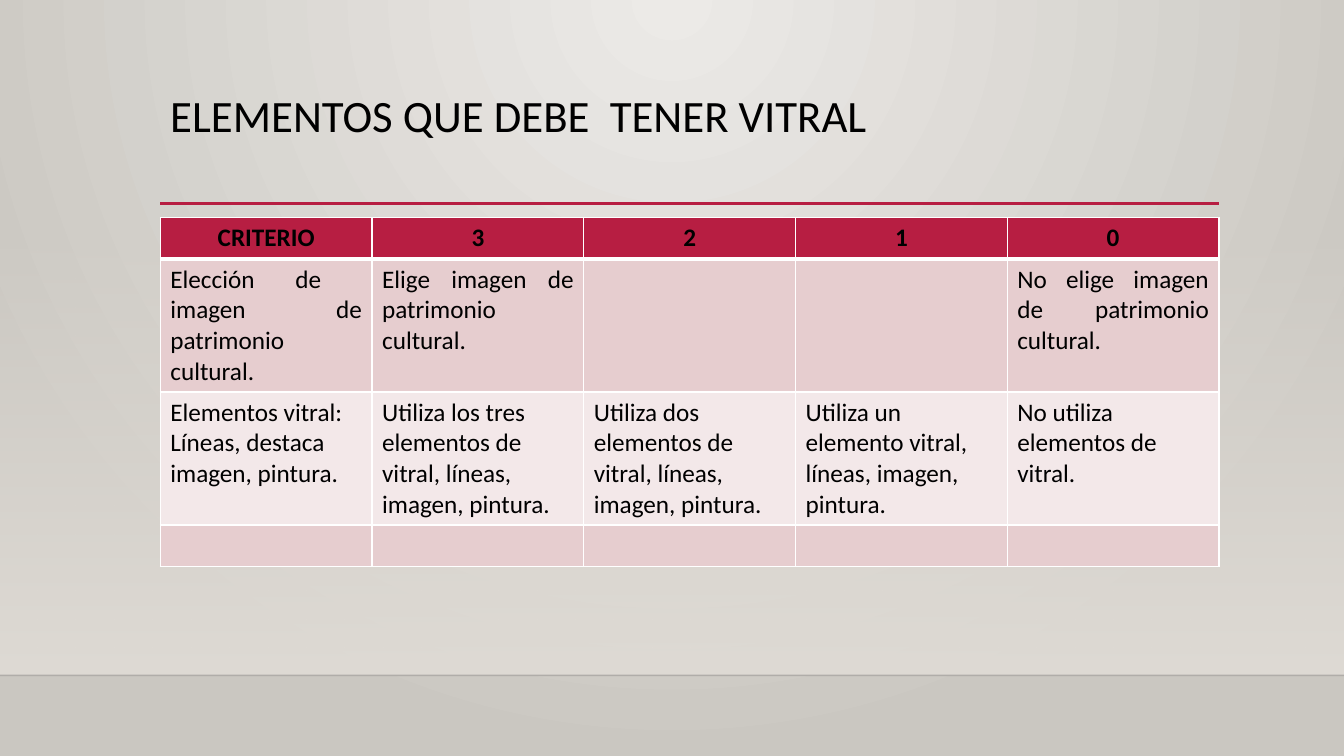
from pptx import Presentation
from pptx.dml.color import RGBColor
from pptx.enum.shapes import MSO_CONNECTOR, MSO_SHAPE
from pptx.enum.text import MSO_ANCHOR, PP_ALIGN
from pptx.oxml import parse_xml
from pptx.oxml.ns import nsdecls
from pptx.util import Inches, Pt
from lxml.etree import SubElement

WIDTH, HEIGHT = 13.33, 7.5
FLOOR_TOP = 6.7
FONT = "Calibri"
ACCENT, BLACK, WHITE = "B71E42", "000000", "FFFFFF"
BANDS = ["E6CDCF", "F3E8E9"]
ROW_HEIGHTS = [0.41, 1.32, 1.32, 0.41]
ROWS = [
    ["CRITERIO", "3", "2", "1", "0"],
    ["Elección de  imagen de patrimonio cultural.",
     "Elige imagen de patrimonio cultural.", "", "",
     "No elige imagen de patrimonio cultural."],
    ["Elementos vitral:\nLíneas, destaca imagen, pintura.",
     "Utiliza los tres elementos de vitral, líneas, imagen, pintura.",
     "Utiliza dos elementos de vitral, líneas, imagen, pintura.",
     "Utiliza un elemento vitral, líneas, imagen, pintura.",
     "No utiliza elementos de vitral."],
    [""] * 5,
]
ALIGNMENTS = [PP_ALIGN.CENTER, PP_ALIGN.JUSTIFY, PP_ALIGN.LEFT, PP_ALIGN.LEFT]


def color(value):
    return RGBColor.from_string(value)


def set_alpha(element, percent):
    """Make the first colour below an element partly transparent."""
    rgb = element.xpath(".//a:srgbClr")[0]
    rgb.append(parse_xml(f'<a:alpha {nsdecls("a")} val="{percent * 1000}"/>'))


def set_gradient(fill, start, end):
    fill.gradient()
    for stop, value in zip(fill.gradient_stops, (start, end)):
        stop.color.rgb = color(value)


def add_line(page, left, top, width, line_color, weight):
    line = page.shapes.add_connector(
        MSO_CONNECTOR.STRAIGHT, Inches(left), Inches(top),
        Inches(left + width), Inches(top))
    line.line.color.rgb = color(line_color)
    line.line.width = Pt(weight)
    properties = line._element.spPr
    SubElement(properties, properties.xpath("a:ln")[0].tag[:-2] + "effectLst")
    return line


def add_backdrop(page):
    """Radial background, wall shading and the line where the floor begins."""
    set_gradient(page.background.fill, "ECEAE7", "CAC7C1")
    gradient = page._element.xpath(".//p:bgPr/a:gradFill")[0]
    gradient.replace(gradient.xpath("a:lin")[0], parse_xml(
        f'<a:path {nsdecls("a")} path="circle">'
        '<a:fillToRect l="43000" t="0" r="43000" b="100000"/></a:path>'))

    wall_top = 2.21
    wall = page.shapes.add_shape(
        MSO_SHAPE.RECTANGLE, 0, Inches(wall_top),
        Inches(WIDTH), Inches(FLOOR_TOP - wall_top))
    wall.shadow.inherit = False
    wall.line.fill.background()
    set_gradient(wall.fill, "DFDBD5", "DFDBD5")
    wall.fill.gradient_angle = 270
    set_alpha(wall._element.spPr, 0)

    floor_line = add_line(page, 0, FLOOR_TOP, WIDTH, "000001", 1)
    set_alpha(floor_line._element.spPr, 20)


def add_title(page, left, top, width, height):
    box = page.shapes.add_textbox(
        Inches(left), Inches(top), Inches(width), Inches(height))
    frame = box.text_frame
    frame.word_wrap = True
    frame.vertical_anchor = MSO_ANCHOR.TOP
    para = frame.paragraphs[0]
    para.text = "ELEMENTOS QUE DEBE  TENER VITRAL"
    para.line_spacing = 0.9
    para.font.name = FONT
    para.font.size = Pt(32)
    para.font.color.rgb = color(BLACK)
    add_line(page, left, top + height - 0.01, width, ACCENT, 2.5)


def set_borders(cell, top, bottom):
    """White borders; top and bottom are weights in points."""
    properties = cell._tc.get_or_add_tcPr()
    for index, (side, weight) in enumerate(
            [("L", 1), ("R", 1), ("T", top), ("B", bottom)]):
        properties.insert(index, parse_xml(
            f'<a:ln{side} {nsdecls("a")} w="{Pt(weight)}"><a:solidFill>'
            f'<a:srgbClr val="{WHITE}"/></a:solidFill></a:ln{side}>'))


def fill_cell(cell, text, row):
    cell.text = text
    cell.fill.solid()
    cell.fill.fore_color.rgb = color(BANDS[(row - 1) % 2] if row else ACCENT)
    set_borders(cell, 3 if row == 1 else 1, 3 if row == 0 else 1)
    for para in cell.text_frame.paragraphs:
        para.alignment = ALIGNMENTS[row]
        para.font.name = FONT
        para.font.size = Pt(18)
        para.font.bold = row == 0
        para.font.color.rgb = color(BLACK)


def add_rubric(page, left, top, width):
    table = page.shapes.add_table(
        len(ROWS), len(ROWS[0]), Inches(left), Inches(top),
        Inches(width), Inches(sum(ROW_HEIGHTS))).table
    for row, texts in enumerate(ROWS):
        table.rows[row].height = Inches(ROW_HEIGHTS[row])
        for column, text in enumerate(texts):
            fill_cell(table.cell(row, column), text, row)


def main():
    deck = Presentation()
    deck.slide_width, deck.slide_height = Inches(WIDTH), Inches(HEIGHT)
    page = deck.slides.add_slide(deck.slide_layouts[6])
    add_backdrop(page)
    add_title(page, 1.59, 0.88, 10.5, 1.15)
    add_rubric(page, 1.59, 2.16, 10.5)
    deck.save("out.pptx")


if __name__ == "__main__":
    main()
